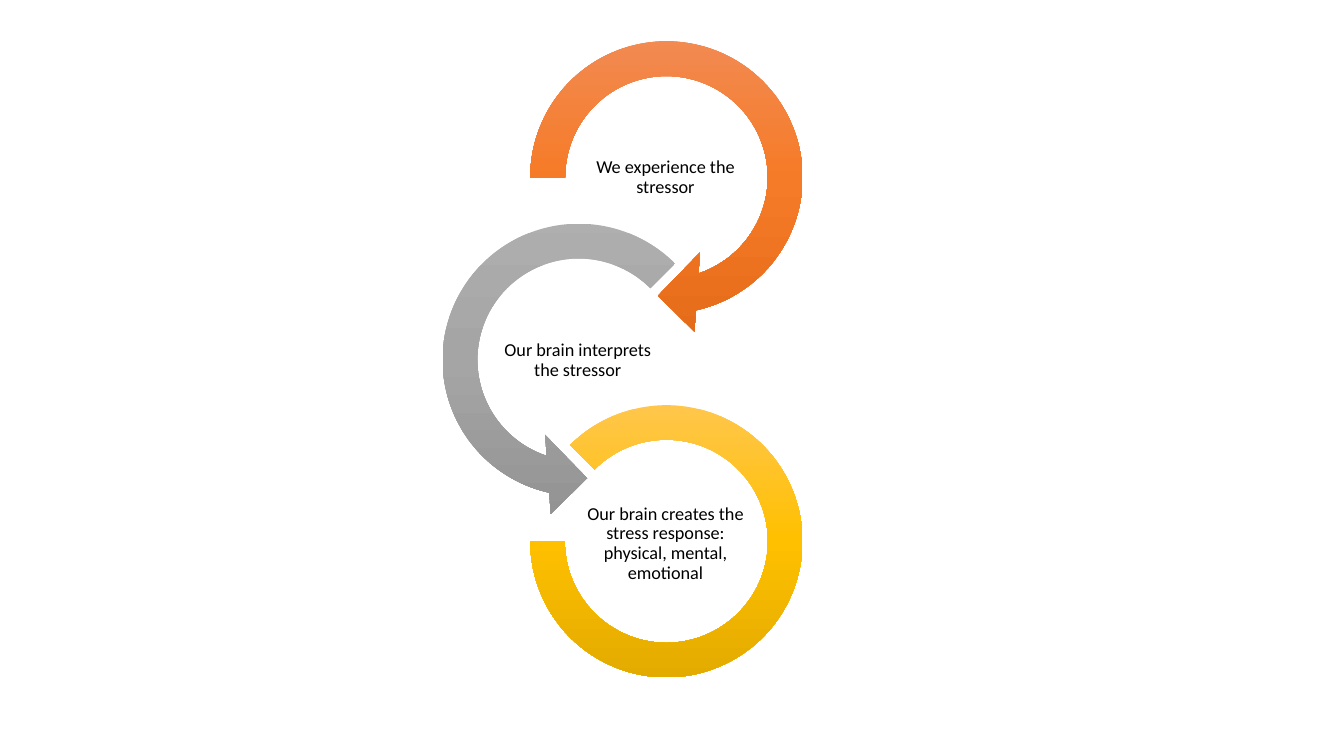
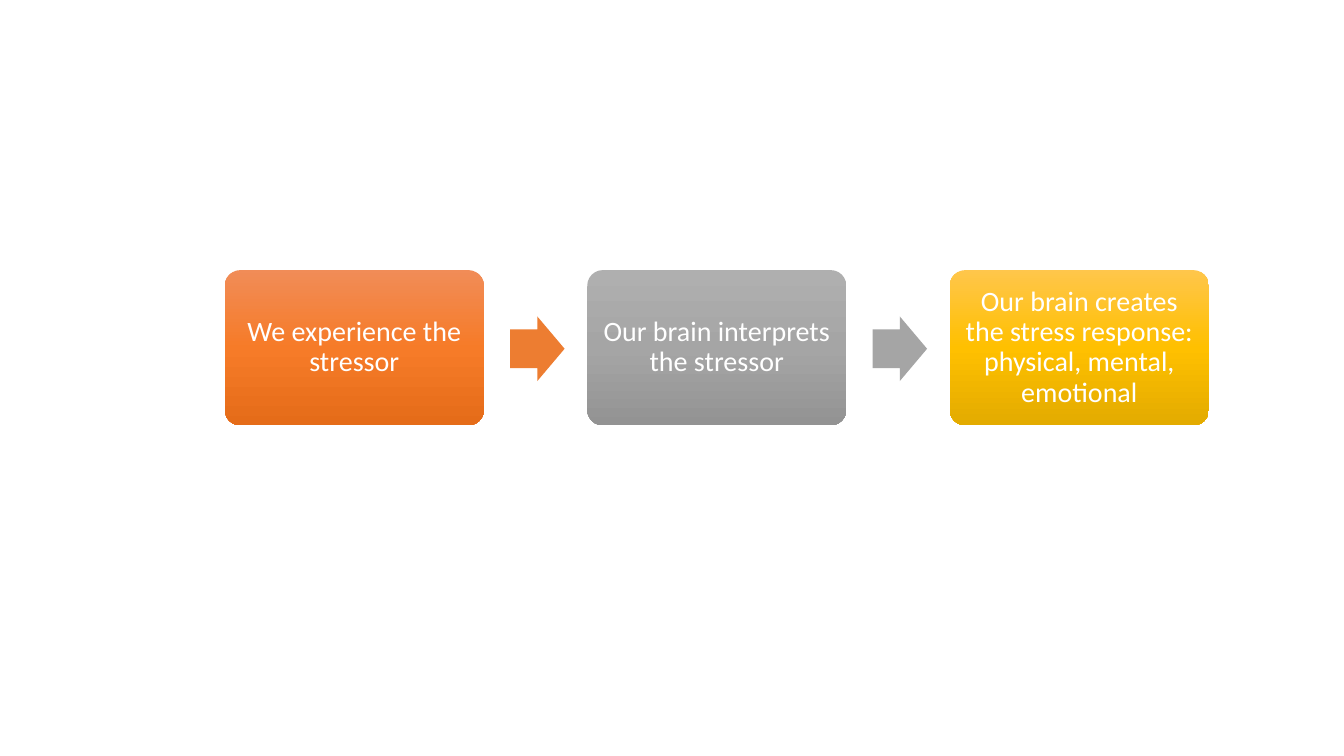
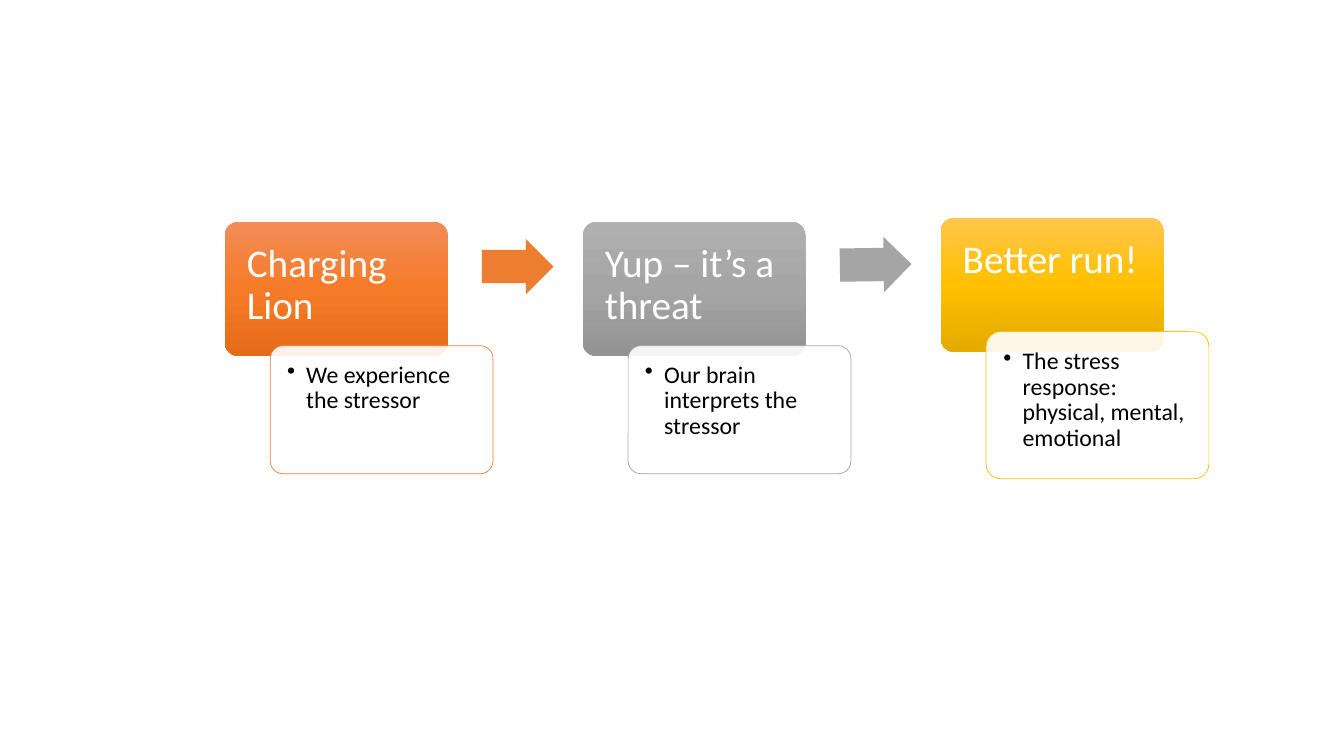
from dataclasses import dataclass

from lxml import etree
from pptx import Presentation
from pptx.dml.color import RGBColor
from pptx.enum.shapes import MSO_SHAPE
from pptx.enum.text import MSO_ANCHOR, PP_ALIGN
from pptx.oxml.ns import qn
from pptx.util import Inches, Pt

ROUND = MSO_SHAPE.ROUNDED_RECTANGLE
ARROW = MSO_SHAPE.RIGHT_ARROW
CURL = MSO_SHAPE.CIRCULAR_ARROW
BACKCURL = MSO_SHAPE.LEFT_CIRCULAR_ARROW
ARC = MSO_SHAPE.BLOCK_ARC
CENTER, LEFT = PP_ALIGN.CENTER, PP_ALIGN.LEFT
MIDDLE, TOP = MSO_ANCHOR.MIDDLE, MSO_ANCHOR.TOP


@dataclass(frozen=True)
class Tone:
    light: str
    mid: str
    dark: str
    flat: str


@dataclass(frozen=True)
class Theme:
    font: str = "Calibri"
    black: str = "000000"
    white: str = "FFFFFF"
    ring: int = 13
    step: int = 20
    head: int = 28
    note: int = 17
    lead: float = 0.9
    tones: tuple = (
        Tone("F18C57", "F67B28", "E56C19", "ED7D31"),
        Tone("AFAFAF", "A5A5A5", "939393", "A5A5A5"),
        Tone("FFC64B", "FFC000", "E3AB00", "FFC000"),
    )


THEME = Theme()

STEPS = (
    "We experience the stressor",
    "Our brain interprets the stressor",
    "Our brain creates the stress response: physical, mental, emotional",
)


# Fills and text
def shade(shape, tone):
    """Fill from light at the top to dark at the foot."""
    shape.fill.gradient()
    shape.fill.gradient_angle = 270
    stops = shape.element.spPr.find(".//" + qn("a:gsLst"))
    for stop in list(stops):
        stops.remove(stop)
    for place, color in ((0, tone.light), (50, tone.mid), (100, tone.dark)):
        stop = etree.SubElement(stops, qn("a:gs"), pos=str(place * 1000))
        etree.SubElement(stop, qn("a:srgbClr"), val=color)


def paint(shape, color, alpha=None):
    shape.fill.solid()
    shape.fill.fore_color.rgb = RGBColor.from_string(color)
    if alpha is not None:
        node = shape.element.spPr.find(qn("a:solidFill") + "/" + qn("a:srgbClr"))
        etree.SubElement(node, qn("a:alpha"), val=str(alpha * 1000))


def write(shape, text, size, color, inset, align=CENTER, anchor=MIDDLE):
    frame = shape.text_frame
    frame.word_wrap = True
    frame.vertical_anchor = anchor
    frame.margin_left = frame.margin_right = Inches(inset)
    frame.margin_top = frame.margin_bottom = Inches(inset)
    para = frame.paragraphs[0]
    para.text = text
    para.alignment = align
    para.line_spacing = THEME.lead
    font = para.runs[0].font
    font.name = THEME.font
    font.size = Pt(size)
    font.color.rgb = RGBColor.from_string(color)
    return para


def bullet(para, indent):
    props = para._p.get_or_add_pPr()
    props.set("marL", str(Inches(indent)))
    props.set("indent", str(-Inches(indent)))
    etree.SubElement(props, qn("a:buChar"), char="•")


# Kinds of element
def form(slide, kind, box, adjust):
    shape = slide.shapes.add_shape(kind, *map(Inches, box))
    for index, value in enumerate(adjust):
        shape.adjustments[index] = value
    shape.shadow.inherit = False
    shape.line.fill.background()
    return shape


def panel(slide, box, tone):
    shape = form(slide, ROUND, box, (0.1,))
    shade(shape, tone)
    return shape


def arrow(slide, box, tone, turn=0):
    shape = form(slide, ARROW, box, (0.6, 0.5))
    shape.rotation = turn
    paint(shape, tone.flat)


def card(slide, box, tone, text):
    shape = form(slide, ROUND, box, (0.1,))
    paint(shape, THEME.white, alpha=90)
    shape.line.color.rgb = RGBColor.from_string(tone.flat)
    shape.line.width = Pt(0.5)
    para = write(shape, text, THEME.note, THEME.black, 0.13, LEFT, TOP)
    bullet(para, 0.19)


# Slides
def rings(slide):
    """Three linked rings, each with its step inside."""
    parts = (
        (CURL, 5.04, 0.19, 3.14, (0.11, 11.42, 45, 108, 0.125), 5.73, 1.33),
        (BACKCURL, 4.17, 2, 3.14, (0.11, 11.42, 63, 189, 0.125), 4.86, 3.14),
        (ARC, 5.26, 4.02, 2.7, (135, 108, 0.127), 5.73, 4.96),
    )
    for part, tone, text in zip(parts, THEME.tones, STEPS):
        kind, left, top, side, adjust, inner, line = part
        shade(form(slide, kind, (left, top, side, side), adjust), tone)
        label = slide.shapes.add_textbox(
            *map(Inches, (inner, line, 1.74, 0.87)))
        write(label, text, THEME.ring, THEME.black, 0.01)


def chain(slide):
    """Three boxes in a row, with arrows between them."""
    first, last = 2.23, 9.42
    pitch = (last - first) / 2
    for index, (tone, text) in enumerate(zip(THEME.tones, STEPS)):
        left = first + index * pitch
        shape = panel(slide, (left, 2.68, 2.57, 1.54), tone)
        write(shape, text, THEME.step, THEME.white, 0.08)
        if index < 2:
            arrow(slide, (left + 2.83, 3.14, 0.54, 0.64), tone)


def story(slide):
    """Three headings, each with a card that overlaps its corner."""
    first, pitch = 2.23, 3.55
    parts = (
        ("Charging Lion", STEPS[0], 2.2, 3.43, 1.27),
        ("Yup – it’s a threat", STEPS[1], 2.2, 3.43, 1.27),
        ("Better run!", "The stress response: physical, mental, emotional",
         2.16, 3.29, 1.46),
    )
    links = ((2.37, 0), (2.35, -0.8))
    for index, (part, tone) in enumerate(zip(parts, THEME.tones)):
        head, note, top, low, height = part
        left = first + index * pitch
        shape = panel(slide, (left, top, 2.21, 1.33), tone)
        write(shape, head, THEME.head, THEME.white, 0.18, LEFT, TOP)
        card(slide, (left + 0.45, low, 2.21, height), tone, note)
        if index < len(links):
            level, turn = links[index]
            arrow(slide, (left + 2.55, level, 0.71, 0.55), tone, turn)


def main():
    deck = Presentation()
    deck.slide_width = Inches(13.33)
    deck.slide_height = Inches(7.5)
    blank = deck.slide_layouts[6]
    for draw in (rings, chain, story):
        draw(deck.slides.add_slide(blank))
    deck.save("out.pptx")


if __name__ == "__main__":
    main()
